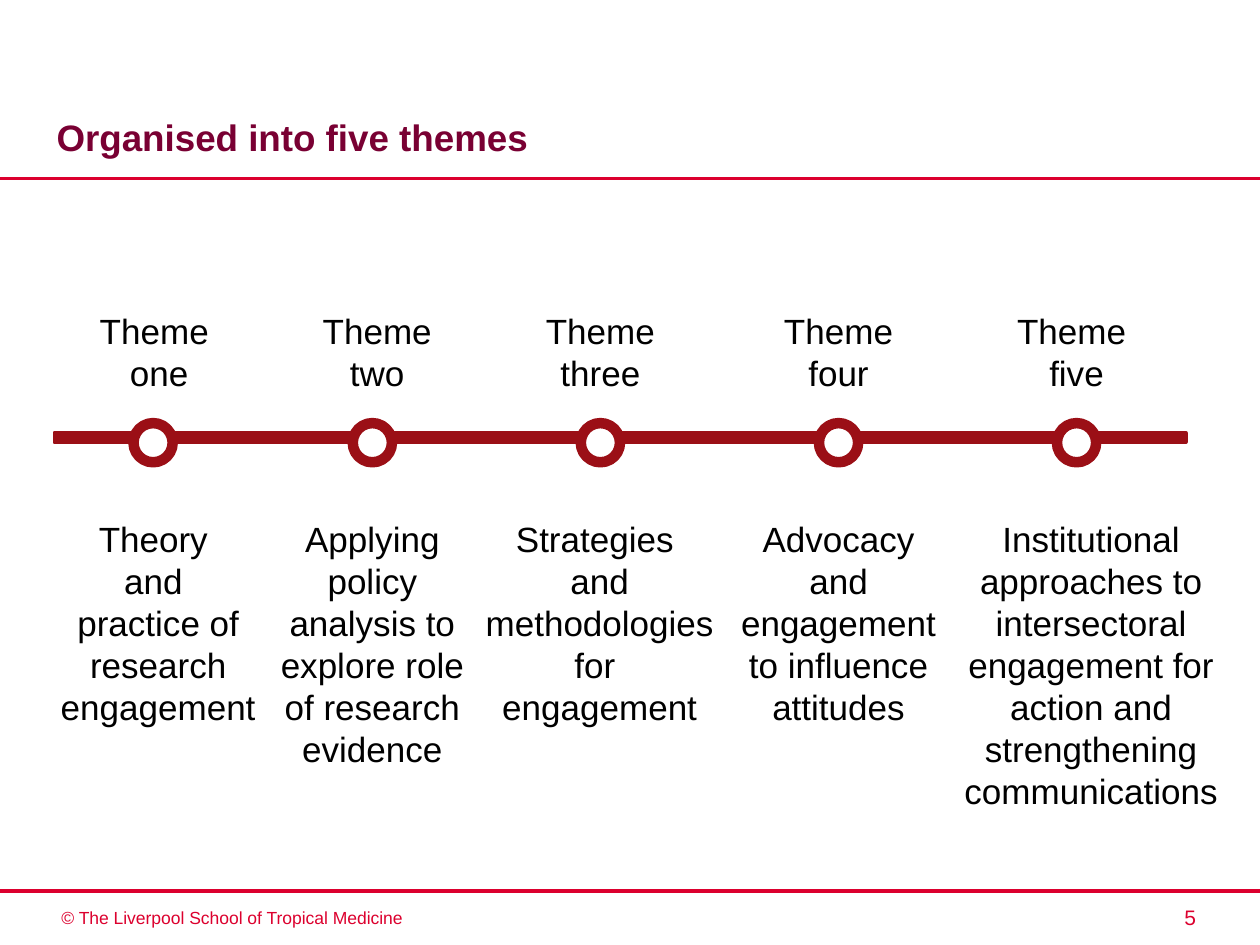
from lxml.etree import SubElement
from pptx import Presentation
from pptx.dml.color import RGBColor
from pptx.enum.shapes import MSO_CONNECTOR, MSO_SHAPE
from pptx.enum.text import MSO_ANCHOR, PP_ALIGN
from pptx.oxml.ns import qn
from pptx.util import Pt

COLORS = {
    "rule": "DC002E",
    "title": "790033",
    "timeline": "9B0F16",
    "white": "FFFFFF",
    "text": "000000",
}
FONT = "Arial"

# Marker centre, heading lines and centre, description paragraphs, centre and width
THEMES = [
    (87.5, ["Theme", " one"], 88.2,
     ["Theory ", "and ", "practice of research engagement"], 90.4, 130.3),
    (212.8, ["Theme", "two"], 215.6,
     ["Applying policy analysis to explore role of research evidence"], 212.8, 136),
    (343.1, ["Theme", "three"], 343.1,
     ["Strategies ", "and methodologies for ", "engagement"], 342.7, 158.4),
    (479.2, ["Theme", "four"], 479.2,
     ["Advocacy and engagement to influence attitudes"], 479.2, 136),
    (615.2, ["Theme ", "five"], 615.2,
     ["Institutional approaches to intersectoral engagement for action "
      "and strengthening communications "], 623.5, 164.2),
]


def color(name):
    return RGBColor.from_string(COLORS[name])


def add_text(s, box, lines, size, name="text", align=PP_ALIGN.LEFT,
             anchor=MSO_ANCHOR.TOP, bold=False):
    tf = s.shapes.add_textbox(*map(Pt, box)).text_frame
    tf.word_wrap = True
    tf.vertical_anchor = anchor
    for i, line in enumerate(lines):
        p = tf.paragraphs[0] if i == 0 else tf.add_paragraph()
        p.text = line
        p.alignment = align
        p.font.name = FONT
        p.font.size = Pt(size)
        p.font.bold = bold
        p.font.color.rgb = color(name)


def add_rule(s, y):
    line = s.shapes.add_connector(MSO_CONNECTOR.STRAIGHT, Pt(0), Pt(y), Pt(720), Pt(y))
    line.line.color.rgb = color("rule")
    line.line.width = Pt(2.25)
    SubElement(line._element.spPr, qn("a:effectLst"))


def add_shape(s, kind, box, fill, width):
    sp = s.shapes.add_shape(kind, *map(Pt, box))
    sp.shadow.inherit = False
    sp.fill.solid()
    sp.fill.fore_color.rgb = color(fill)
    sp.line.color.rgb = color("timeline")
    sp.line.width = Pt(width)


def add_theme(s, marker, heading, heading_x, description, desc_x, desc_width):
    size = 22.4
    add_shape(s, MSO_SHAPE.FLOWCHART_CONNECTOR,
              (marker - size / 2, 241.8, size, size), "white", 6)
    add_text(s, (heading_x - 62, 173.5, 124, 55.7), heading, 20, align=PP_ALIGN.CENTER)
    add_text(s, (desc_x - desc_width / 2, 292.3, desc_width, 128), description, 20,
             align=PP_ALIGN.CENTER)


def main():
    prs = Presentation()
    prs.slide_width, prs.slide_height = Pt(720), Pt(540)
    s = prs.slides.add_slide(prs.slide_layouts[6])

    # Title and footer
    add_rule(s, 102)
    add_rule(s, 509)
    add_text(s, (25.2, 21.6, 658.8, 72.7), ["Organised into five themes"], 21, "title",
             anchor=MSO_ANCHOR.BOTTOM, bold=True)
    add_text(s, (28, 514.8, 284.4, 19.4),
             ["© The Liverpool School of Tropical Medicine"], 10, "rule")
    add_text(s, (558.7, 513.4, 131.8, 21.6), ["5"], 12, "rule", align=PP_ALIGN.RIGHT)

    # Timeline with its themes
    add_shape(s, MSO_SHAPE.RECTANGLE, (31, 247.3, 646.6, 5.4), "timeline", 2)
    for theme in THEMES:
        add_theme(s, *theme)

    prs.save("out.pptx")


if __name__ == "__main__":
    main()
